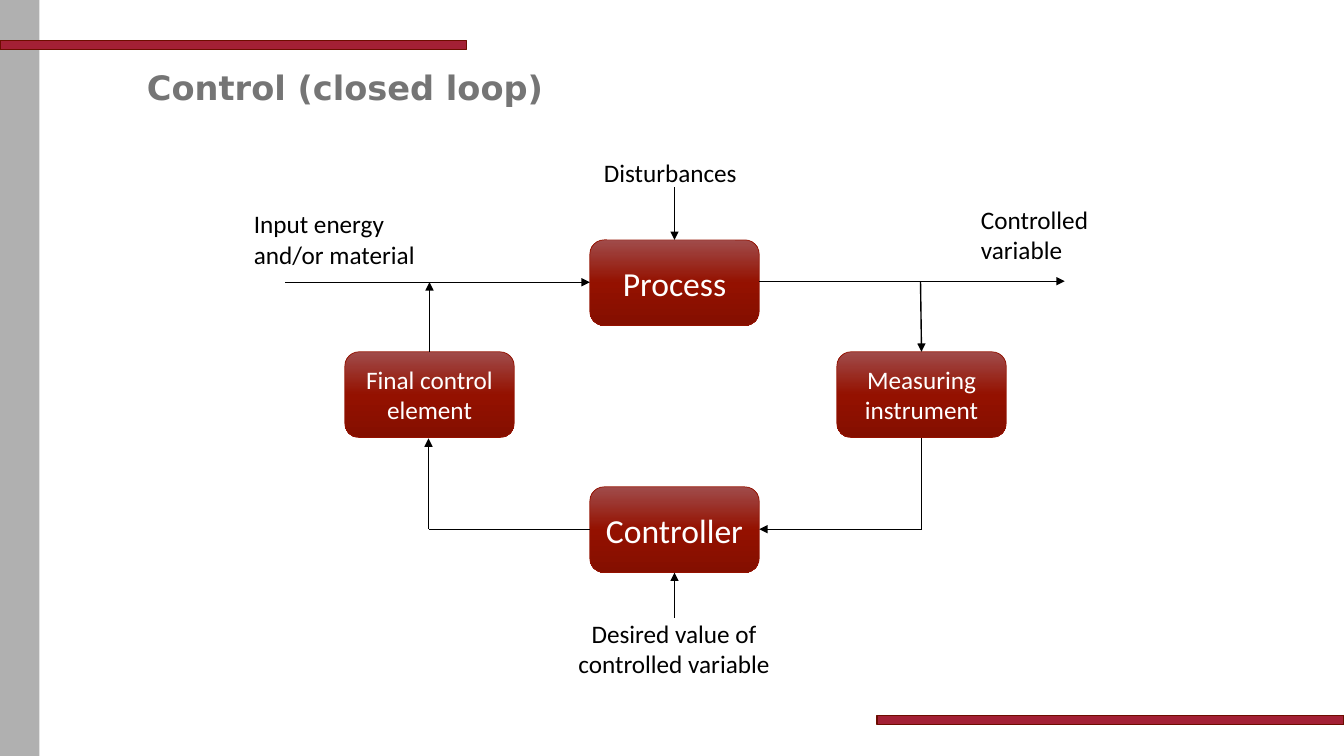
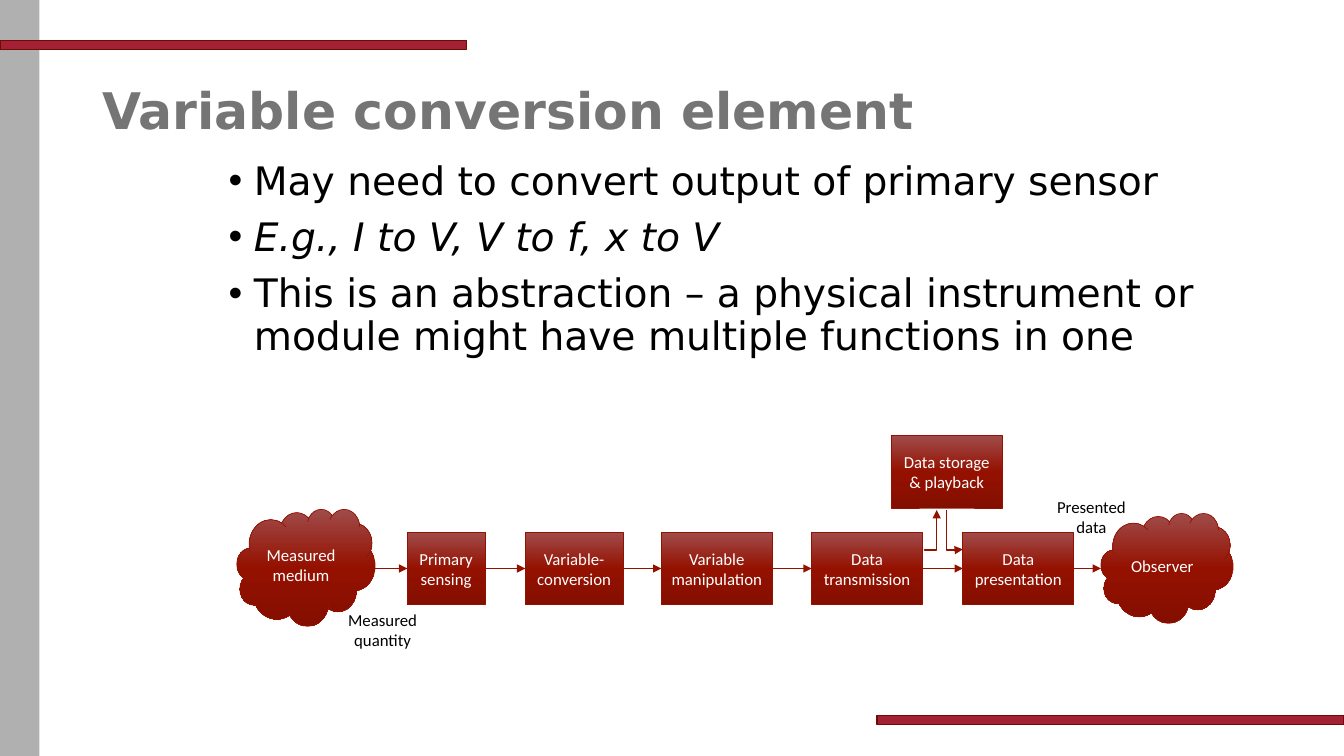
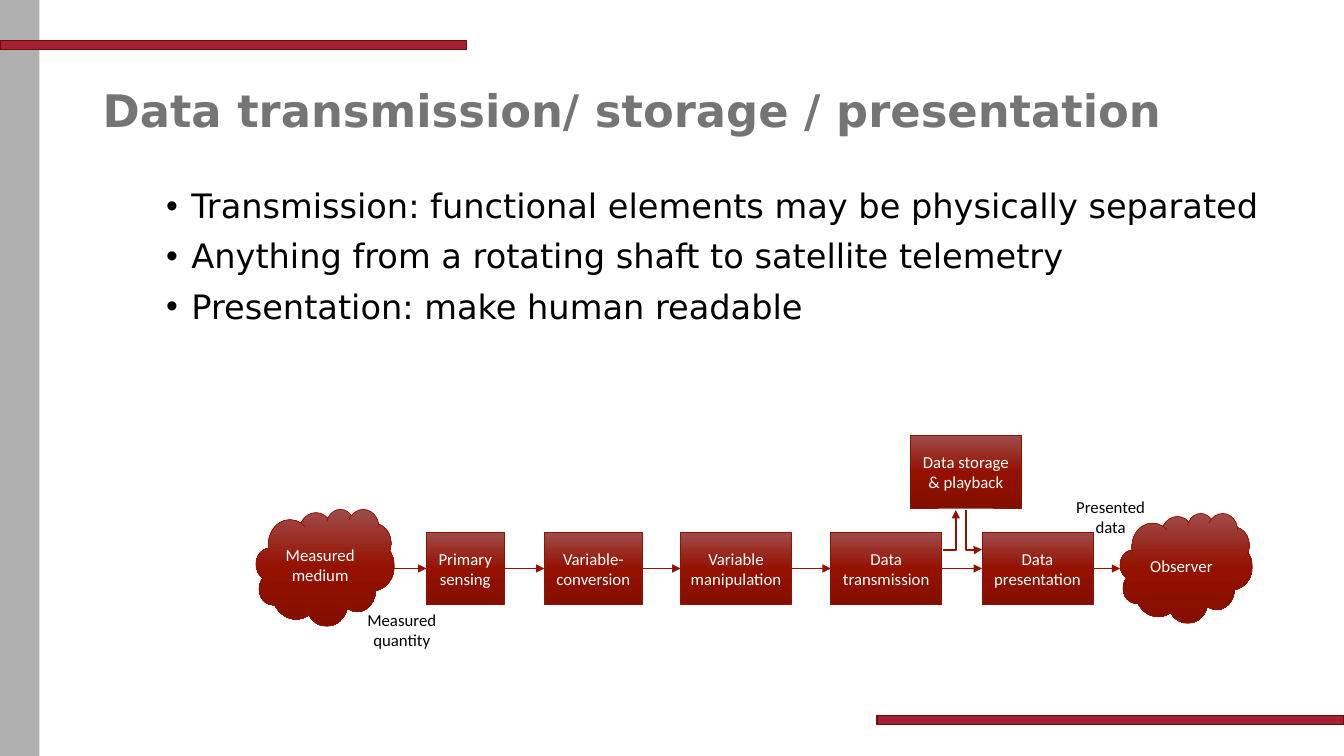
import copy
import itertools

import lxml.etree
import pptx
import pptx.dml.color
import pptx.enum.shapes
import pptx.enum.text
import pptx.oxml.ns
import pptx.util

Inches = pptx.util.Inches
RGBColor = pptx.dml.color.RGBColor
Shape = pptx.enum.shapes.MSO_SHAPE
Connector = pptx.enum.shapes.MSO_CONNECTOR
Align = pptx.enum.text.PP_ALIGN
Anchor = pptx.enum.text.MSO_ANCHOR
qn = pptx.oxml.ns.qn

# Colours and fonts
WHITE = RGBColor(0xFF, 0xFF, 0xFF)
BLACK = RGBColor(0x00, 0x00, 0x00)
SIDE_GREY = RGBColor(0xB0, 0xB0, 0xB0)
TITLE_GREY = RGBColor(0x75, 0x75, 0x75)
BAND_RED = RGBColor(0xA3, 0x20, 0x35)
BAND_EDGE = RGBColor(0x6D, 0x0D, 0x00)
NODE_TOP = RGBColor(0xA0, 0x4C, 0x4B)
NODE_RED = RGBColor(0x94, 0x11, 0x00)
NODE_BOTTOM = RGBColor(0x84, 0x0F, 0x00)
HEADING_FONT = "DejaVu Sans"
DIAGRAM_FONT = "Calibri"


def add_xml(parent, tag, **attributes):
    return lxml.etree.SubElement(parent, qn(tag), **attributes)


def write(frame, text, font=DIAGRAM_FONT, size=18, color=BLACK, bold=False,
          italics=(), align=Align.LEFT, anchor=Anchor.TOP, wrap=True,
          spacing=None, before=0, bullet=None):
    """Fill a text frame, one paragraph per line of text."""
    frame.word_wrap = wrap
    frame.vertical_anchor = anchor
    for index, line in enumerate(text.split("\n")):
        paragraph = frame.add_paragraph() if index else frame.paragraphs[0]
        paragraph.alignment = align
        if spacing:
            paragraph.line_spacing = spacing
        if index and before:
            paragraph.space_before = pptx.util.Pt(before)
        if bullet:
            properties = paragraph._p.get_or_add_pPr()
            properties.set("marL", str(Inches(0.25)))
            properties.set("indent", str(Inches(-0.25)))
            add_xml(properties, "a:buFont", typeface="Arial")
            add_xml(properties, "a:buChar", char=bullet)
        run = paragraph.add_run()
        run.text = line
        run.font.name = font
        run.font.size = pptx.util.Pt(size)
        run.font.color.rgb = color
        run.font.bold = bold
        run.font.italic = index in italics


class Deck:
    def __init__(self):
        self.presentation = pptx.Presentation()
        self.presentation.slide_width = Inches(13.33)
        self.presentation.slide_height = Inches(7.5)
        self.slide = None

    def new_slide(self, title, size, left=0.92, top=0.4, width=11.5, height=1.45):
        self.slide = self.presentation.slides.add_slide(
            self.presentation.slide_layouts[6])
        self.band(0, 0, 0.39, 7.5, SIDE_GREY)
        self.band(0, 0.4, 4.63, 0.09, BAND_RED, BAND_EDGE)
        self.band(8.7, 7.1, 4.63, 0.09, BAND_RED, BAND_EDGE)
        self.text(title, left, top, width, height, font=HEADING_FONT, size=size,
                  color=TITLE_GREY, bold=True, anchor=Anchor.MIDDLE, spacing=0.9)

    def shape(self, kind, left, top, width, height):
        shape = self.slide.shapes.add_shape(
            kind, Inches(left), Inches(top), Inches(width), Inches(height))
        shape.shadow.inherit = False
        return shape

    def band(self, left, top, width, height, fill, edge=None):
        band = self.shape(Shape.RECTANGLE, left, top, width, height)
        band.fill.solid()
        band.fill.fore_color.rgb = fill
        if edge is None:
            band.line.fill.background()
        else:
            band.line.color.rgb = edge
            band.line.width = pptx.util.Pt(1)

    def text(self, text, left, top, width, height, **style):
        box = self.slide.shapes.add_textbox(
            Inches(left), Inches(top), Inches(width), Inches(height))
        write(box.text_frame, text, **style)

    def bullets(self, text, left, top, width, height, **style):
        self.text(text, left, top, width, height, font=HEADING_FONT,
                  spacing=0.9, before=10, bullet="•", **style)

    def node(self, kind, text, left, top, width, height, size):
        node = self.shape(kind, left, top, width, height)
        node.fill.gradient()
        node.fill.gradient_angle = 270
        stop_list = node._element.spPr.find(".//" + qn("a:gsLst"))
        stop_list.append(copy.deepcopy(stop_list[0]))
        shades = ((0, NODE_TOP), (0.5, NODE_RED), (1, NODE_BOTTOM))
        for stop, (position, color) in zip(node.fill.gradient_stops, shades):
            stop.position = position
            stop.color.rgb = color
        node.line.color.rgb = NODE_RED
        node.line.width = pptx.util.Pt(0.5)
        node.text_frame.margin_left = node.text_frame.margin_right = Inches(0.08)
        write(node.text_frame, text, size=size, color=WHITE,
              align=Align.CENTER, anchor=Anchor.MIDDLE)

    def line(self, start, end, color=BLACK, arrow="tailEnd", kind=Connector.STRAIGHT):
        line = self.slide.shapes.add_connector(
            kind, *(Inches(value) for value in (*start, *end)))
        line.line.color.rgb = color
        line.line.width = pptx.util.Pt(1)
        if arrow:
            add_xml(line.line._get_or_add_ln(), "a:" + arrow, type="triangle")
        add_xml(line._element.spPr, "a:effectLst")
        return line

    def elbow(self, start, end, arrow):
        """Run sideways from start, then up to end, as a turned connector."""
        (x1, y1), (x2, y2) = start, end
        middle_x, middle_y = (x1 + x2) / 2, (y1 + y2) / 2
        rightward = x2 > x1
        reach = (y1 - y2) / 2 * (1 if rightward else -1)
        rise = abs(x2 - x1) / 2
        elbow = self.line((middle_x + reach, middle_y + rise),
                          (middle_x - reach, middle_y - rise),
                          NODE_RED, arrow, Connector.ELBOW)
        properties = elbow._element.spPr
        properties.find(qn("a:xfrm")).set("rot", str((90 if rightward else 270) * 60000))
        guides = properties.find(qn("a:prstGeom")).get_or_add_avLst()
        add_xml(guides, "a:gd", name="adj1", fmla="val -2000")

    def pipeline(self, shift):
        """Draw the measurement chain, moved right by shift."""
        middle = 5.64
        stages = (
            (Shape.CLOUD, "Measured medium", 2.35, 5.05, 1.37, 1.16),
            (Shape.RECTANGLE, "Primary sensing", 4.04, 5.28, 0.77, 0.72),
            (Shape.RECTANGLE, "Variable-conversion", 5.21, 5.28, 0.97, 0.72),
            (Shape.RECTANGLE, "Variable manipulation", 6.56, 5.28, 1.1, 0.72),
            (Shape.RECTANGLE, "Data transmission", 8.05, 5.28, 1.1, 0.72),
            (Shape.RECTANGLE, "Data presentation", 9.55, 5.28, 1.1, 0.72),
            (Shape.CLOUD, "Observer", 10.92, 5.09, 1.31, 1.09),
        )
        storage = (Shape.RECTANGLE, "Data storage & playback", 8.84, 4.32, 1.1, 0.72)
        for kind, text, left, *box in stages + (storage,):
            self.node(kind, text, left + shift, *box, size=12)
        for before, after in itertools.pairwise(stages):
            self.line((before[2] + before[4] + shift, middle),
                      (after[2] + shift, middle), NODE_RED)

        # Storage branch
        self.elbow((9.17 + shift, 5.45), (9.29 + shift, 5.06), "tailEnd")
        self.elbow((9.55 + shift, 5.45), (9.39 + shift, 5.06), "headEnd")

        # Labels
        for text, left, top in (("Measured\nquantity", 3.32, 6),
                                ("Presented data", 10.35, 4.88)):
            self.text(text, left + shift, top, 0.95, 0.5, size=12, align=Align.CENTER)


def control_loop(deck):
    deck.new_slide("Control (closed loop)", 24, 1.36, 0.26, 9, 1.25)

    # Loop elements
    for text, left, top, size in (("Process", 5.85, 2.38, 24),
                                  ("Final control element", 3.42, 3.49, 18),
                                  ("Measuring instrument", 8.3, 3.49, 18),
                                  ("Controller", 5.85, 4.83, 24)):
        deck.node(Shape.ROUNDED_RECTANGLE, text, left, top, 1.68, 0.85, size)

    # Signal paths
    for start, end in (((2.83, 2.8), (5.85, 2.8)),
                       ((7.53, 2.79), (10.56, 2.79)),
                       ((9.13, 2.8), (9.14, 3.49)),
                       ((4.26, 3.49), (4.26, 2.8)),
                       ((4.25, 5.25), (4.25, 4.35)),
                       ((9.14, 5.25), (7.53, 5.25)),
                       ((6.69, 6.13), (6.69, 5.68)),
                       ((6.69, 1.86), (6.69, 2.38))):
        deck.line(start, end)
    deck.line((5.85, 5.25), (4.25, 5.25), arrow=None)
    deck.line((9.14, 4.35), (9.14, 5.25), arrow=None)

    # Labels
    deck.text("Controlled\nvariable", 9.63, 1.98, 1.28, 0.71, wrap=False)
    deck.text("Input energy and/or material", 2.42, 2.02, 2, 0.71)
    deck.text("Desired value of controlled variable", 5.36, 6.08, 2.65, 0.71,
              align=Align.CENTER)
    deck.text("Disturbances", 5.89, 1.51, 1.59, 0.4, wrap=False)


def variable_conversion(deck):
    deck.new_slide("Variable conversion element", 36)
    deck.bullets("May need to convert output of primary sensor\n"
                 "E.g., I to V, V to f, x to V\n"
                 "This is an abstraction – a physical instrument or module "
                 "might have multiple functions in one",
                 2.17, 1.55, 10.34, 4.95, size=28, italics=(1,))
    deck.pipeline(0)


def data_transmission(deck):
    deck.new_slide("Data transmission/ storage / presentation", 32)
    deck.bullets("Transmission: functional elements may be physically separated\n"
                 "Anything from a rotating shaft to satellite telemetry\n"
                 "Presentation: make human readable",
                 1.55, 1.83, 11.5, 4.95, size=24)
    deck.pipeline(0.19)


def main():
    deck = Deck()
    control_loop(deck)
    variable_conversion(deck)
    data_transmission(deck)
    deck.presentation.save("out.pptx")


if __name__ == "__main__":
    main()
